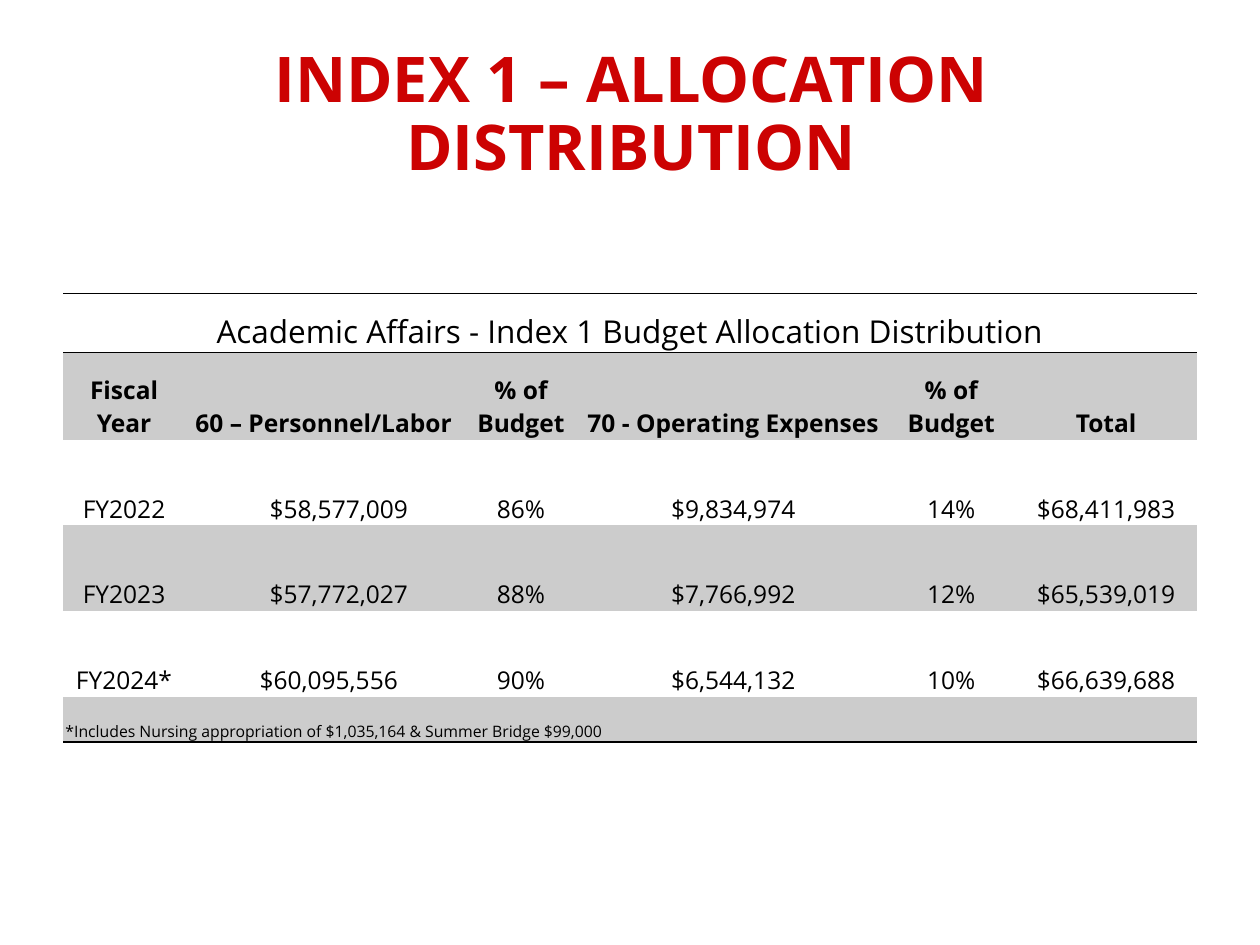
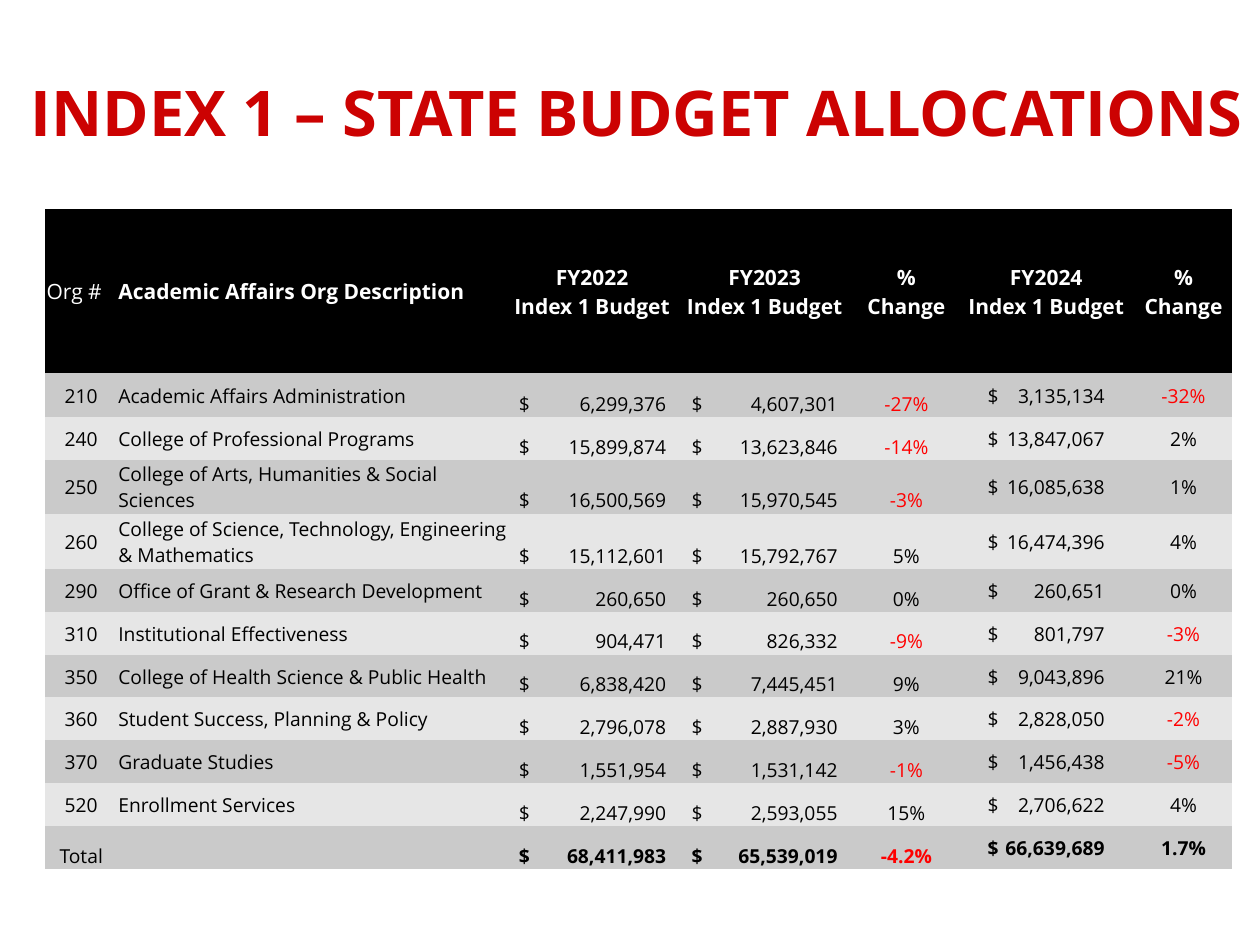
from lxml import etree
from pptx import Presentation
from pptx.dml.color import RGBColor
from pptx.enum.text import MSO_ANCHOR as ANCHOR, PP_ALIGN as ALIGN
from pptx.oxml.ns import qn
from pptx.util import Inches, Pt

FONT = "Open Sans"
RED, BLACK, WHITE, LOSS = "CC0202", "000000", "FFFFFF", "FF0000"
NO_STYLE = "{2D5ABB26-0587-4C30-8999-92F81FD0307C}"


def add_run(p, text, size, color=BLACK, bold=False):
    r = p.add_run()
    r.text = text
    r.font.name, r.font.size, r.font.bold = FONT, Pt(size), bold
    r.font.color.rgb = RGBColor.from_string(color)


def set_cell(cell, text, size, pad, fill=None, color=BLACK, bold=False,
             align=ALIGN.CENTER, anchor=ANCHOR.BOTTOM, left=0, tab=None):
    cell.margin_left = Inches(pad + left)
    cell.margin_right = cell.margin_top = Inches(pad)
    cell.margin_bottom = 0
    cell.vertical_anchor = anchor
    if fill:
        cell.fill.solid()
        cell.fill.fore_color.rgb = RGBColor.from_string(fill)
    else:
        cell.fill.background()
    tf = cell.text_frame
    for i, line in enumerate(text.split("\n")):
        p = tf.paragraphs[0] if i == 0 else tf.add_paragraph()
        p.alignment = align
        if tab:
            tabs = etree.SubElement(p._p.get_or_add_pPr(), qn("a:tabLst"))
            etree.SubElement(tabs, qn("a:tab"), pos=str(Inches(tab)), algn="r")
        add_run(p, line, size, color, bold)


prs = Presentation()
prs.slide_width, prs.slide_height = Inches(10), Inches(7.5)

layouts = [
    ("INDEX 1 – ALLOCATION DISTRIBUTION", 0.3, 9.42, 0.5, 2.33,
     [0.97, 2.2, 0.93, 2.44, 1.02, 1.44], [0.47, 0.69, 0.68, 0.68, 0.68, 0.36]),
    ("INDEX 1 – STATE BUDGET ALLOCATIONS", 0.11, 9.89, 0.36, 1.66,
     [0.57, 3.12, 1.3, 1.44, 0.81, 1.41, 0.77],
     [1.3, 0.35, 0.34, 0.34, 0.44] + [0.34] * 7),
]
tables = []
for title, title_left, title_width, left, top, cols, rows in layouts:
    s = prs.slides.add_slide(prs.slide_layouts[5])
    sp = s.shapes.title
    sp.left, sp.top = Inches(title_left), Inches(0.3)
    sp.width, sp.height = Inches(title_width), Inches(1.25)
    tf = sp.text_frame
    tf.word_wrap = True
    tf.vertical_anchor = ANCHOR.MIDDLE
    p = tf.paragraphs[0]
    p.alignment, p.line_spacing = ALIGN.CENTER, 0.9
    add_run(p, title, 36, RED, True)

    table = s.shapes.add_table(len(rows), len(cols), Inches(left), Inches(top),
                               Inches(sum(cols)), Inches(sum(rows))).table
    table.first_row = table.horz_banding = False
    table._tbl.tblPr.find(qn("a:tableStyleId")).text = NO_STYLE
    for col, width in zip(table.columns, cols):
        col.width = Inches(width)
    for row, height in zip(table.rows, rows):
        row.height = Inches(height)
    tables.append(table)

distribution, allocations = tables

years = [
    ["Fiscal Year", "60 – Personnel/Labor", "% of Budget",
     "70 - Operating Expenses", "% of Budget", "Total"],
    ["FY2022", "$58,577,009", "86%", "$9,834,974", "14%", "$68,411,983"],
    ["FY2023", "$57,772,027", "88%", "$7,766,992", "12%", "$65,539,019"],
    ["FY2024*", "$60,095,556", "90%", "$6,544,132", "10%", "$66,639,688"],
]
labor_indents = [0, 0.24, 0.24, 0.08]
GRAY, PAD = "CCCCCC", 0.02

for row, edges in ((0, ("lnT", "lnB")), (5, ("lnB",))):
    for cell in distribution.rows[row].cells:
        tcPr = cell._tc.get_or_add_tcPr()
        for edge in edges:
            ln = etree.SubElement(tcPr, qn("a:" + edge), w=str(Pt(1)))
            solid = etree.SubElement(ln, qn("a:solidFill"))
            etree.SubElement(solid, qn("a:srgbClr"), val=BLACK)

distribution.cell(0, 0).merge(distribution.cell(0, 5))
distribution.cell(5, 0).merge(distribution.cell(5, 3))
set_cell(distribution.cell(0, 0),
         "Academic Affairs - Index 1 Budget Allocation Distribution", 18, PAD)
for i, values in enumerate(years):
    for j, text in enumerate(values):
        set_cell(distribution.cell(i + 1, j), text, 14, PAD,
                 fill=None if i % 2 else GRAY, bold=i == 0,
                 left=labor_indents[i] if j == 1 else 0)
set_cell(distribution.cell(5, 0),
         "*Includes Nursing appropriation of $1,035,164 & Summer Bridge $99,000",
         9, PAD, GRAY, align=ALIGN.LEFT)
for j in (4, 5):
    set_cell(distribution.cell(5, j), "", 9, PAD, GRAY)

headers = ["Org #", "Academic Affairs Org Description", "FY2022\nIndex 1 Budget",
           "FY2023\nIndex 1 Budget", "% Change", "FY2024\nIndex 1 Budget", "% Change"]
orgs = [
    ("210", "Academic Affairs Administration",
     "6,299,376", "4,607,301", "-27%", "3,135,134", "-32%"),
    ("240", "College of Professional Programs",
     "15,899,874", "13,623,846", "-14%", "13,847,067", "2%"),
    ("250", "College of Arts, Humanities & Social Sciences",
     "16,500,569", "15,970,545", "-3%", "16,085,638", "1%"),
    ("260", "College of Science, Technology, Engineering & Mathematics",
     "15,112,601", "15,792,767", "5%", "16,474,396", "4%"),
    ("290", "Office of Grant & Research Development",
     "260,650", "260,650", "0%", "260,651", "0%"),
    ("310", "Institutional Effectiveness",
     "904,471", "826,332", "-9%", "801,797", "-3%"),
    ("350", "College of Health Science & Public Health",
     "6,838,420", "7,445,451", "9%", "9,043,896", "21%"),
    ("360", "Student Success, Planning & Policy",
     "2,796,078", "2,887,930", "3%", "2,828,050", "-2%"),
    ("370", "Graduate Studies",
     "1,551,954", "1,531,142", "-1%", "1,456,438", "-5%"),
    ("520", "Enrollment Services",
     "2,247,990", "2,593,055", "15%", "2,706,622", "4%"),
    ("Total", "", "68,411,983", "65,539,019", "-4.2%", "66,639,689", "1.7%"),
]
money_tabs = {2: (0.06, 1.17), 3: (0.13, 1.16), 5: (0.23, 0.93)}
BANDS, PAD = ("CACACA", "E6E6E6"), 0.01

for j, text in enumerate(headers):
    set_cell(allocations.cell(0, j), text, 12, PAD, BLACK, WHITE, bold=j > 0,
             align=ALIGN.LEFT if j < 2 else ALIGN.CENTER, anchor=ANCHOR.MIDDLE)
for i, values in enumerate(orgs):
    is_total = values[0] == "Total"
    for j, text in enumerate(values):
        left, tab = money_tabs.get(j, (0, None))
        low = j in (2, 3, 4) or (is_total and j == 0)
        set_cell(allocations.cell(i + 1, j), "$\t" + text if tab else text, 11, PAD,
                 BANDS[i % 2], LOSS if text.startswith("-") else BLACK,
                 bold=is_total and j > 0,
                 align=ALIGN.LEFT if tab or j == 1 else ALIGN.CENTER,
                 anchor=ANCHOR.BOTTOM if low else ANCHOR.MIDDLE,
                 left=left, tab=tab)

prs.save("out.pptx")
